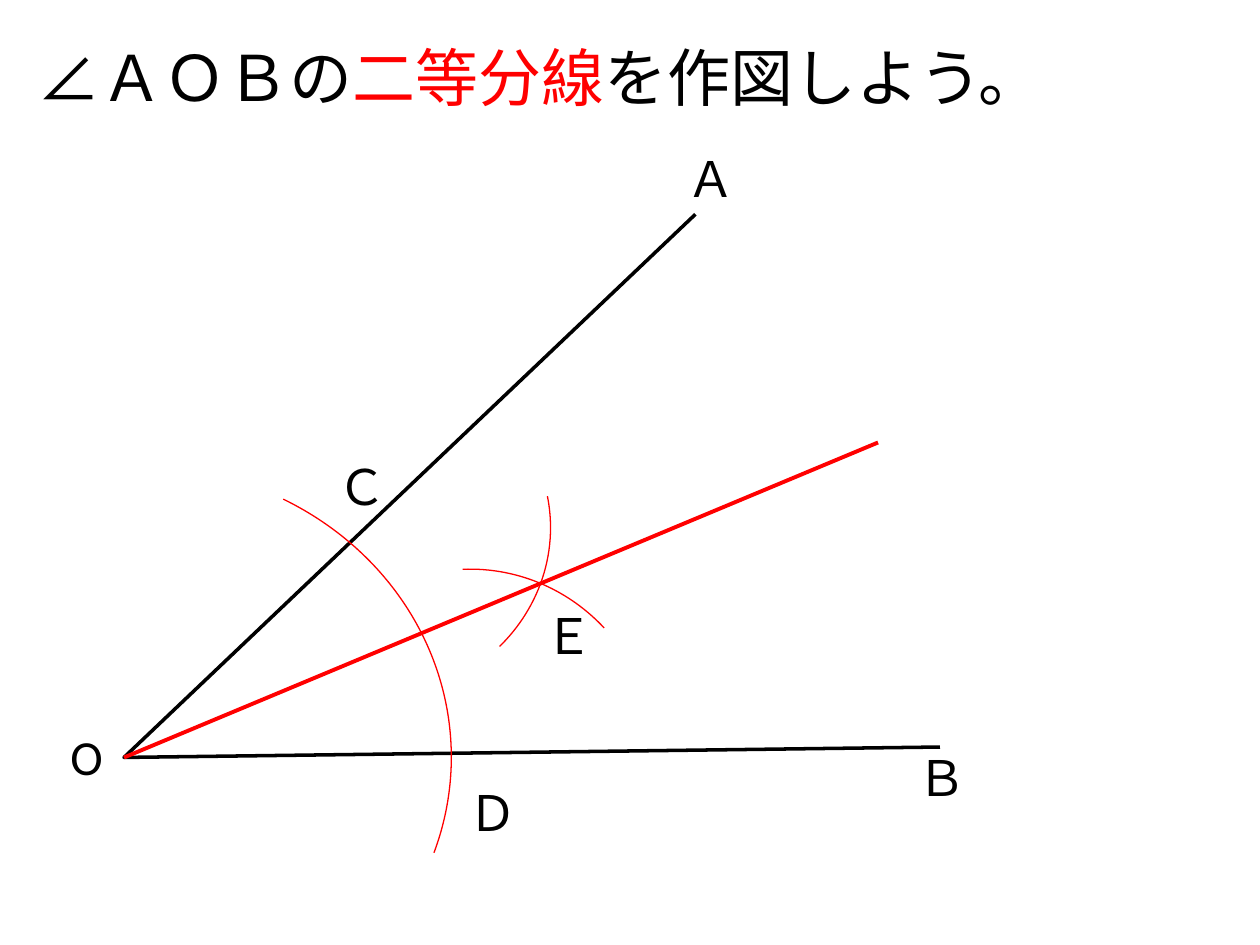
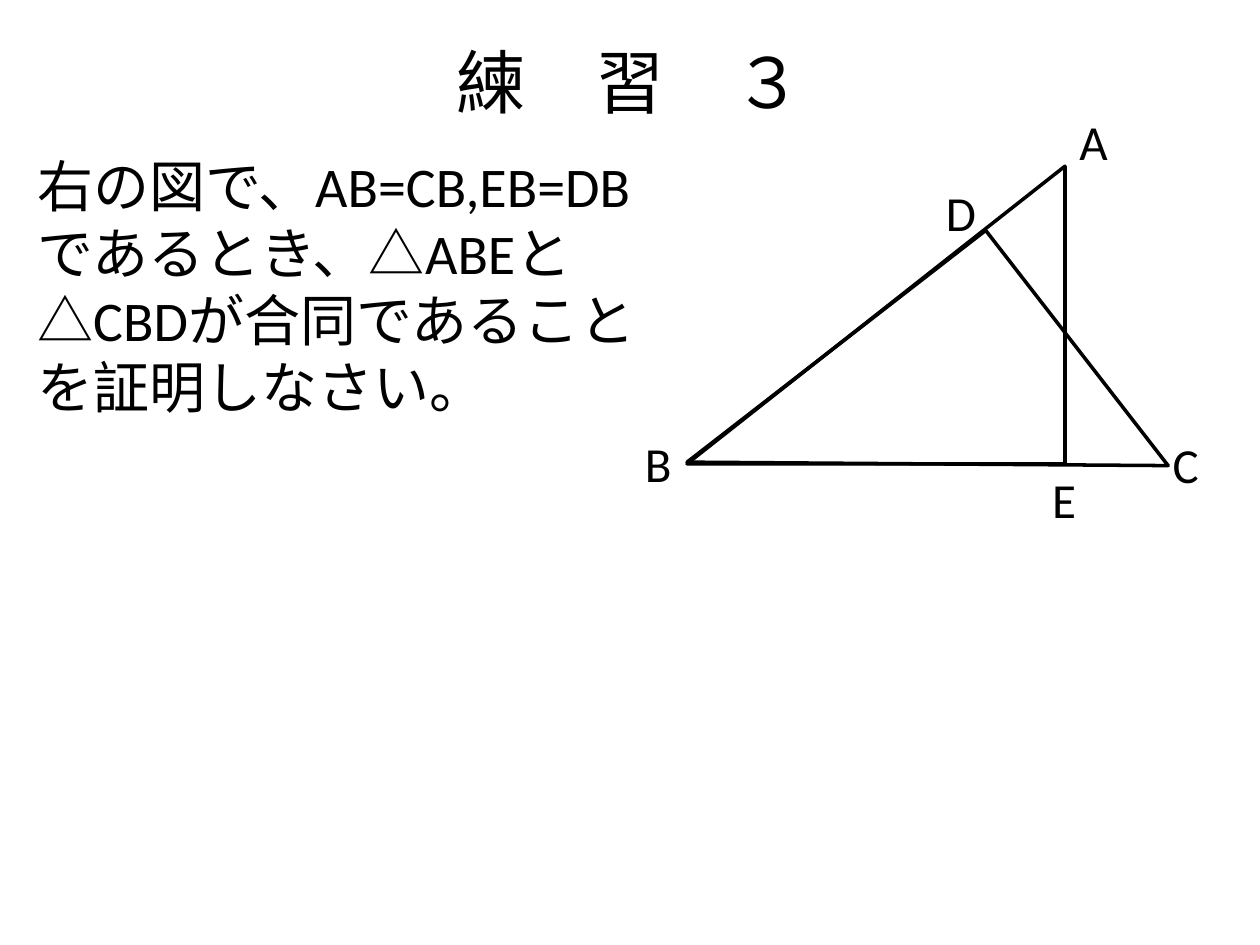
import pptx
import pptx.util
import pptx.dml.color
import pptx.enum.shapes
import pptx.enum.text
import pptx.oxml
import pptx.oxml.ns

Cm = pptx.util.Cm
Pt = pptx.util.Pt
SHAPE = pptx.enum.shapes.MSO_SHAPE
ALIGN = pptx.enum.text.PP_ALIGN
ANCHOR = pptx.enum.text.MSO_ANCHOR
SIZING = pptx.enum.text.MSO_AUTO_SIZE

BLACK = pptx.dml.color.RGBColor(0, 0, 0)
RED = pptx.dml.color.RGBColor(255, 0, 0)
FONT = "Calibri"


def write(slide, text, box, size=28, align=ALIGN.LEFT, anchor=ANCHOR.TOP,
          wrap=True, grow=False, before=0):
    shape = slide.shapes.add_textbox(*map(Cm, box))
    frame = shape.text_frame
    frame.word_wrap = wrap
    frame.auto_size = SIZING.SHAPE_TO_FIT_TEXT if grow else SIZING.NONE
    frame.vertical_anchor = anchor
    para = frame.paragraphs[0]
    para.alignment = align
    para.space_before = Pt(before)
    parts = [(text, BLACK)] if isinstance(text, str) else text
    for words, color in parts:
        run = para.add_run()
        run.text = words
        run.font.name = FONT
        run.font.size = Pt(size)
        run.font.color.rgb = color


def title(slide, text, box, **style):
    write(slide, text, box, anchor=ANCHOR.MIDDLE, **style)


def label(slide, name, left, top, width=1.35, wrap=True):
    write(slide, name, (left, top, width, 1.45), wrap=wrap, grow=True)


def outline(shape, color, weight):
    shape.shadow.inherit = False
    shape.fill.background()
    shape.line.color.rgb = color
    shape.line.width = Pt(weight)


def arc(slide, box, start, end, turn=0):
    shape = slide.shapes.add_shape(SHAPE.ARC, *map(Cm, box))
    for i, angle in enumerate((start, end)):
        shape.adjustments[i] = angle * 0.6
    shape.rotation = turn
    outline(shape, RED, 0.75)


def angle(slide, *points):
    first, *rest = [(Cm(x), Cm(y)) for x, y in points]
    path = slide.shapes.build_freeform(*first)
    path.add_line_segments(rest, close=False)
    outline(path.convert_to_shape(), BLACK, 2)


def ray(slide, start, end):
    line = slide.shapes.add_connector(
        pptx.enum.shapes.MSO_CONNECTOR.STRAIGHT, *map(Cm, start + end))
    line.line.color.rgb = RED
    line.line.width = Pt(2.25)
    line._element.spPr.append(pptx.oxml.parse_xml(
        "<a:effectLst %s/>" % pptx.oxml.ns.nsdecls("a")))


def wedge(slide, left, top, corner, turn):
    shape = slide.shapes.add_shape(
        SHAPE.ISOSCELES_TRIANGLE, Cm(left), Cm(top), Cm(6), Cm(7.62))
    shape.adjustments[0] = corner
    shape.rotation = turn
    outline(shape, BLACK, 2)


def bisect(slide):
    title(slide, [("∠ＡＯＢの", BLACK), ("二等分線", RED),
                  ("を作図しよう。", BLACK)],
          (0.5, 0.33, 24.4, 2.4), size=36)
    apex = (2.5, 15.27)
    angle(slide, (14.02, 4.32), apex, (18.95, 15.06))
    arc(slide, (-3.5, 9.4, 12.6, 11.73), 299.24, 17.95)
    ray(slide, apex, (17.7, 8.92))
    arc(slide, (3.5, 7.14, 7.6, 7), 350.33, 40.82)
    arc(slide, (5.7, 11.56, 7.6, 7.42), 3.92, 52.26, turn=263.5)
    for name, left, top in (
            ("Ｄ", 9.2, 15.65), ("Ｃ", 6.55, 9.07), ("Ｂ", 18.24, 14.94),
            ("O", 1.17, 14.53), ("Ａ", 13.59, 2.87), ("Ｅ", 10.72, 12.09)):
        label(slide, name, left, top)


def drill(slide):
    title(slide, "練　習　３", (1.27, 0.76, 22.86, 1.75),
          size=39.6, align=ALIGN.CENTER)
    write(slide, "右の図で、AB=CB,EB=DBであるとき、△ABEと"
          "△CBDが合同であることを証明しなさい。",
          (0.5, 2.92, 13.2, 6), size=32, before=6.4)
    wedge(slide, 14.66, 2.54, 0, 270)
    for name, left, top, width in (
            ("A", 21.51, 2.13, 1.09), ("D", 18.82, 3.56, 1.12),
            ("E", 20.96, 9.35, 0.99), ("C", 23.39, 8.64, 1.04),
            ("B", 12.75, 8.61, 1.07)):
        label(slide, name, left, top, width, wrap=False)
    wedge(slide, 15.7, 5.54, 1, 232.2)


def main():
    deck = pptx.Presentation()
    deck.slide_width = Cm(25.4)
    deck.slide_height = Cm(19.05)
    for build in (bisect, drill):
        build(deck.slides.add_slide(deck.slide_layouts[6]))
    deck.save("out.pptx")


if __name__ == "__main__":
    main()
